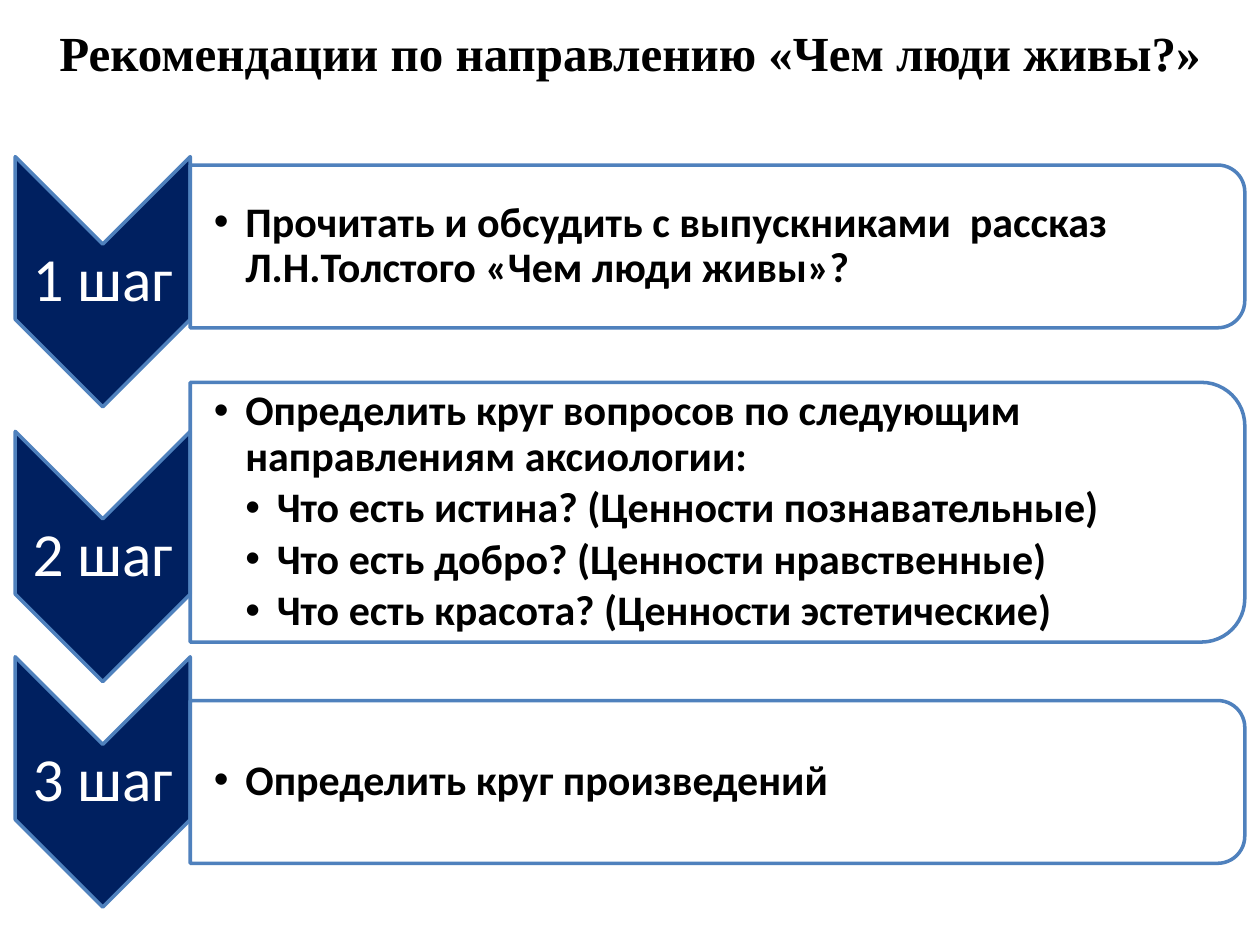
from dataclasses import dataclass

from lxml import etree
from pptx import Presentation
from pptx import util as u
from pptx.dml.color import RGBColor
from pptx.enum import shapes, text
from pptx.oxml.ns import qn

COLOURS = {"navy": "002060", "outline": "4F81BD", "white": "FFFFFF", "black": "000000"}

STEP_LEFT, STEP_WIDTH, STEP_LENGTH = 8.7, 100, 143
LABEL_HEIGHT = 43
PANEL_LEFT, PANEL_WIDTH = 108.7, 602.6
BULLET_INDENT = 18

TITLE_FONT = {"name": "Times New Roman", "size": u.Pt(28), "bold": True}
LABEL_FONT = {"name": "Calibri", "size": u.Pt(35)}
BODY_FONT = {"name": "Calibri", "size": u.Pt(24), "bold": True}
CENTRED = {"alignment": text.PP_ALIGN.CENTER}
LABEL_PARAGRAPH = {**CENTRED, "line_spacing": 0.9}
BODY_PARAGRAPH = {"line_spacing": 0.9, "space_after": u.Pt(3.6)}


@dataclass
class Box:
    left: float
    top: float
    width: float
    height: float

    def lengths(self) -> list:
        return [u.Pt(value) for value in (self.left, self.top, self.width, self.height)]


@dataclass
class Step:
    label: str
    centre: float
    panel_centre: float
    panel_height: float
    text_width: float
    lines: list  # (level, wording) pairs


STEPS = [
    Step("1 шаг", 161, 140.8, 93, 598.3, [
        (1, "Прочитать и обсудить с выпускниками  рассказ Л.Н.Толстого «Чем люди живы»?"),
    ]),
    Step("2 шаг", 318, 292.7, 148.4, 595.4, [
        (1, "Определить круг вопросов по следующим направлениям аксиологии:"),
        (2, "Что есть истина? (Ценности познавательные)"),
        (2, "Что есть добро? (Ценности нравственные)"),
        (2, "Что есть красота? (Ценности эстетические)"),
    ]),
    Step("3 шаг", 446.8, 446.8, 93, 598.3, [(1, "Определить круг произведений")]),
]


def colour(name: str) -> RGBColor:
    return RGBColor.from_string(COLOURS[name])


def apply_format(target, values: dict) -> None:
    for name, value in values.items():
        setattr(target, name, value)


def add_turned_shape(slide, kind, box: Box, fill: str):
    """Add a preset shape turned a quarter clockwise so that it covers box."""
    left = box.left + (box.width - box.height) / 2
    top = box.top + (box.height - box.width) / 2
    shape = slide.shapes.add_shape(kind, *Box(left, top, box.height, box.width).lengths())
    shape.rotation = 90
    shape.shadow.inherit = False
    shape.fill.solid()
    shape.fill.fore_color.rgb = colour(fill)
    shape.line.color.rgb = colour("outline")
    shape.line.width = u.Pt(2)
    return shape


def set_opacity(shape, percent: int) -> None:
    fill_colour = shape.fill._xPr.find(qn("a:solidFill"))[0]
    etree.SubElement(fill_colour, qn("a:alpha"), val=str(percent * 1000))


def set_bullet(paragraph, level: int) -> None:
    properties = paragraph._p.get_or_add_pPr()
    properties.set("marL", str(u.Pt(BULLET_INDENT * level)))
    properties.set("indent", str(-u.Pt(BULLET_INDENT)))
    etree.SubElement(properties, qn("a:buFont"), typeface="Arial")
    etree.SubElement(properties, qn("a:buChar"), char="•")


def add_text(slide, box: Box, lines: list, font: dict, font_colour: str,
             paragraph_format: dict, frame_format: dict) -> None:
    """Add a text box; lines of level 0 carry no bullet."""
    frame = slide.shapes.add_textbox(*box.lengths()).text_frame
    apply_format(frame, {"word_wrap": True, **frame_format})
    for index, (level, wording) in enumerate(lines):
        paragraph = frame.add_paragraph() if index else frame.paragraphs[0]
        apply_format(paragraph, paragraph_format)
        if level:
            set_bullet(paragraph, level)
        run = paragraph.add_run()
        run.text = wording
        apply_format(run.font, font)
        run.font.color.rgb = colour(font_colour)


def middle_frame(margin_left: float) -> dict:
    margins = {f"margin_{side}": u.Pt(1.5) for side in ("top", "right", "bottom")}
    return {"vertical_anchor": text.MSO_ANCHOR.MIDDLE, **margins,
            "margin_left": u.Pt(margin_left)}


def add_step(slide, step: Step) -> None:
    add_turned_shape(
        slide, shapes.MSO_SHAPE.CHEVRON,
        Box(STEP_LEFT, step.centre - STEP_LENGTH / 2, STEP_WIDTH, STEP_LENGTH), "navy")
    add_text(
        slide, Box(STEP_LEFT, step.centre - LABEL_HEIGHT / 2, STEP_WIDTH, LABEL_HEIGHT),
        [(0, step.label)], LABEL_FONT, "white", LABEL_PARAGRAPH, middle_frame(1.5))

    panel_box = Box(PANEL_LEFT, step.panel_centre - step.panel_height / 2,
                    PANEL_WIDTH, step.panel_height)
    panel = add_turned_shape(
        slide, shapes.MSO_SHAPE.ROUND_2_SAME_RECTANGLE, panel_box, "white")
    set_opacity(panel, 90)
    text_height = step.panel_height * 0.905
    add_text(
        slide, Box(PANEL_LEFT, step.panel_centre - text_height / 2, step.text_width, text_height),
        step.lines, BODY_FONT, "black", BODY_PARAGRAPH, middle_frame(13.5))


def main() -> None:
    presentation = Presentation()
    presentation.slide_width, presentation.slide_height = u.Pt(720), u.Pt(540)
    slide = presentation.slides.add_slide(presentation.slide_layouts[6])
    add_text(slide, Box(0, 0, 720, 90), [(0, "Рекомендации по направлению «Чем люди живы?»")],
             TITLE_FONT, "black", CENTRED,
             {"vertical_anchor": text.MSO_ANCHOR.TOP, "margin_top": u.Pt(13)})
    for step in STEPS:
        add_step(slide, step)
    presentation.save("out.pptx")


if __name__ == "__main__":
    main()
